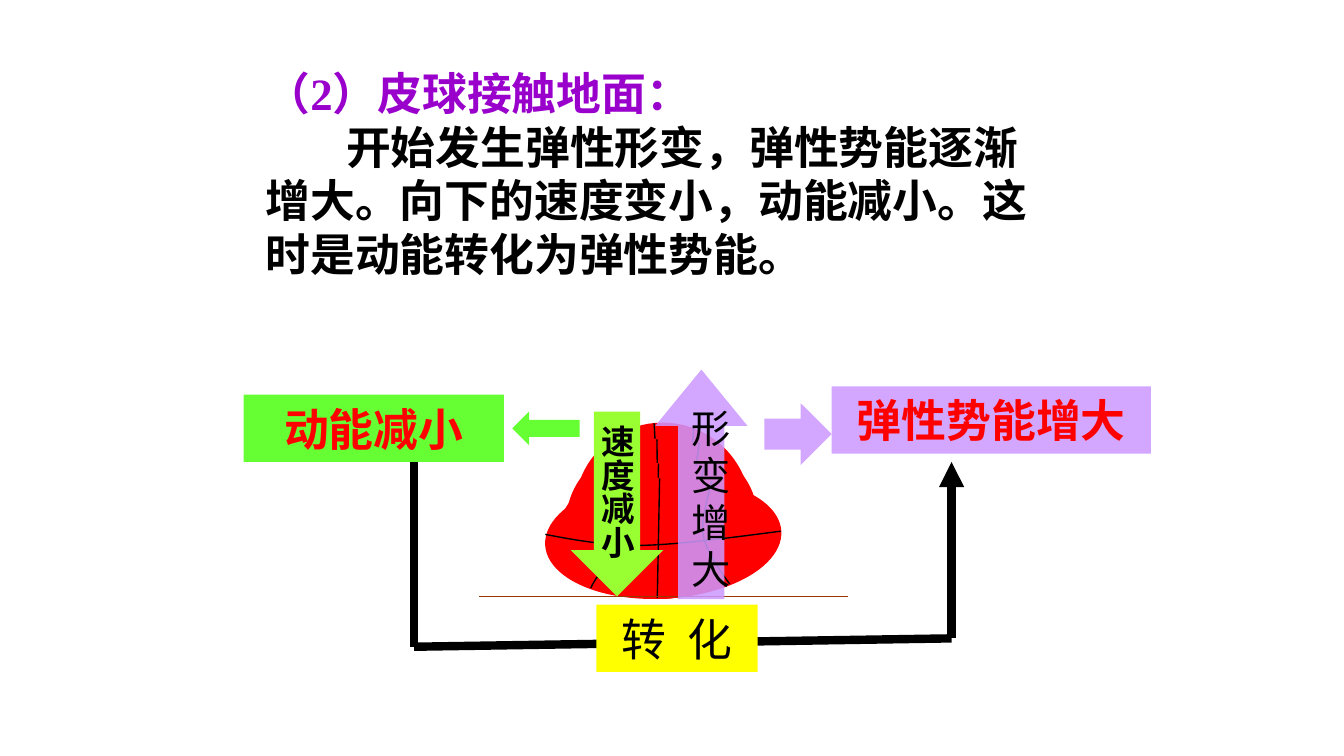
from dataclasses import dataclass
from typing import Optional

from lxml.etree import SubElement
from pptx import Presentation
from pptx.dml.color import RGBColor
from pptx.enum.shapes import MSO_CONNECTOR as Link, MSO_SHAPE as Shape
from pptx.enum.text import MSO_ANCHOR as Anchor, MSO_AUTO_SIZE as AutoSize, PP_ALIGN as Align
from pptx.oxml.ns import qn
from pptx.util import Pt

BLACK = RGBColor(0x00, 0x00, 0x00)
RED = RGBColor(0xFF, 0x00, 0x00)
PURPLE = RGBColor(0x99, 0x00, 0xCC)
LILAC = RGBColor(0xCC, 0x99, 0xFF)
GREEN = RGBColor(0x66, 0xFF, 0x33)
LIME = RGBColor(0x99, 0xFF, 0x33)
YELLOW = RGBColor(0xFF, 0xFF, 0x00)
BROWN = RGBColor(0x99, 0x33, 0x00)
SERIF = "Times New Roman"
SANS = "Noto Sans CJK SC"
LINE_RATIO = 1.2


@dataclass
class Block:
    kind: Shape
    left: float
    top: float
    width: float
    height: float
    fill: RGBColor
    opacity: int = 100
    rotation: float = 0
    head: Optional[float] = None


@dataclass
class Ball:
    left: float
    top: float
    width: float
    height: float
    rotation: float


@dataclass
class Stroke:
    x1: float
    y1: float
    x2: float
    y2: float
    color: RGBColor = BLACK
    weight: float = 4.5
    arrow: bool = False


BALLS = [
    Ball(308.2, 226.8, 93.6, 93.6, 354.4),
    Ball(303.8, 235.4, 101.5, 85, 356.5),
    Ball(299.5, 248.4, 109.4, 72, 357.8),
    Ball(292.3, 256.3, 126, 64.1, 356.6),
]

SEAMS = [
    [(0.25, 0.09), (0.26, 0.16), (0.31, 0.38), (0.29, 0.52), (0.29, 0.66), (0.2, 0.82), (0.18, 0.91)],
    [(0.72, 0.02), (0.71, 0.1), (0.66, 0.33), (0.67, 0.47), (0.68, 0.62), (0.74, 0.8), (0.77, 0.89)],
    [(0, 0.41), (0.12, 0.47), (0.24, 0.53), (0.41, 0.55), (0.57, 0.56), (0.78, 0.53), (1, 0.5)],
    [(0.5, 0), (0.5, 0), (0.48, 0.5), (0.46, 1)],
]

GROUND = Stroke(256.5, 319.5, 454.5, 319.5, BROWN, 0.75)
BRACKET = [
    Stroke(221.8, 247.5, 221.8, 346.5),
    Stroke(221.8, 346.5, 509.8, 342),
    Stroke(509.8, 342, 509.8, 247.5, arrow=True),
]


def set_frame(shape, *, anchor: Anchor = Anchor.TOP, wrap: bool = True,
              vertical: bool = False) -> None:
    frame = shape.text_frame
    frame.word_wrap = wrap
    frame.auto_size = AutoSize.NONE
    frame.vertical_anchor = anchor
    if vertical:
        frame._txBody.bodyPr.set("vert", "eaVert")


def write(para, text: str, *, size: float = 24, color: RGBColor = BLACK, bold: bool = False,
          font: str = SERIF, align: Align = Align.CENTER, indent: float = 0,
          spacing: float = 0) -> None:
    para.alignment = align
    para.space_before = Pt(0)
    para.line_spacing = Pt(size * LINE_RATIO)
    props = para._p.get_or_add_pPr()
    props.set("marL", "0")
    props.set("indent", str(Pt(indent)))
    SubElement(props, qn("a:buNone"))
    span = para.add_run()
    span.text = text
    span.font.size = Pt(size)
    span.font.bold = bold
    span.font.color.rgb = color
    span.font.name = font
    run_props = span._r.get_or_add_rPr()
    SubElement(run_props, qn("a:ea")).set("typeface", SANS)
    if spacing:
        run_props.set("spc", str(int(spacing * 100)))


def draw_block(page, block: Block):
    shape = page.shapes.add_shape(block.kind, Pt(block.left), Pt(block.top),
                                  Pt(block.width), Pt(block.height))
    shape.shadow.inherit = False
    shape.rotation = block.rotation
    shape.fill.solid()
    shape.fill.fore_color.rgb = block.fill
    shape.line.fill.background()
    if block.head is not None:
        shape.adjustments[0] = 0.5
        shape.adjustments[1] = block.head
    if block.opacity < 100:
        color = shape._element.spPr.find(qn("a:solidFill"))[0]
        SubElement(color, qn("a:alpha")).set("val", str(block.opacity * 1000))
    return shape


def draw_label(page, block: Block, text: str, **style) -> None:
    shape = draw_block(page, block)
    set_frame(shape)
    write(shape.text_frame.paragraphs[0], text, **style)


def draw_stroke(page, stroke: Stroke) -> None:
    line = page.shapes.add_connector(Link.STRAIGHT, Pt(stroke.x1), Pt(stroke.y1),
                                     Pt(stroke.x2), Pt(stroke.y2))
    line.line.color.rgb = stroke.color
    line.line.width = Pt(stroke.weight)
    if stroke.arrow:
        SubElement(line.line._get_or_add_ln(), qn("a:tailEnd")).set("type", "triangle")
    SubElement(line._element.spPr, qn("a:effectLst"))


def bend(seam) -> None:
    outline = next(seam._element.iter(qn("a:path")))
    segments = outline.findall(qn("a:lnTo"))
    for first in range(0, len(segments), 3):
        curve = SubElement(outline, qn("a:cubicBezTo"))
        for segment in segments[first:first + 3]:
            curve.append(segment[0])
            outline.remove(segment)


def draw_ball(page, ball: Ball) -> None:
    body = draw_block(page, Block(Shape.OVAL, ball.left, ball.top, ball.width, ball.height,
                                  RED, rotation=ball.rotation))
    body.line.color.rgb = RED
    body.line.width = Pt(0.75)
    for knots in SEAMS:
        points = [(Pt(ball.left + x * ball.width), Pt(ball.top + y * ball.height))
                  for x, y in knots]
        outline = page.shapes.build_freeform(*points[0])
        outline.add_line_segments(points[1:], close=False)
        seam = outline.convert_to_shape()
        bend(seam)
        seam.shadow.inherit = False
        seam.rotation = ball.rotation
        seam.fill.background()
        seam.line.color.rgb = BLACK
        seam.line.width = Pt(0.75)


def main() -> None:
    deck = Presentation()
    deck.slide_width, deck.slide_height = Pt(720), Pt(405)
    page = deck.slides.add_slide(deck.slide_layouts[1])
    title, body = page.placeholders
    title._element.getparent().remove(title._element)

    for ball in BALLS:
        draw_ball(page, ball)
    draw_stroke(page, GROUND)

    body.left, body.top, body.width, body.height = Pt(135), Pt(31.5), Pt(436.5), Pt(122.4)
    set_frame(body)
    write(body.text_frame.paragraphs[0], "（2）皮球接触地面：", color=PURPLE, bold=True, align=Align.LEFT)
    write(body.text_frame.add_paragraph(),
          "开始发生弹性形变，弹性势能逐渐增大。向下的速度变小，动能减小。这时是动能转化为弹性势能。",
          bold=True, align=Align.LEFT, indent=43.2)

    draw_label(page, Block(Shape.RECTANGLE, 130.5, 211.5, 139.5, 36, GREEN),
               "动能减小", color=RED, bold=True)
    draw_label(page, Block(Shape.RECTANGLE, 445.5, 207, 171, 36, LILAC, 86),
               "弹性势能增大", color=RED, bold=True)

    for stroke in BRACKET:
        draw_stroke(page, stroke)
    draw_label(page, Block(Shape.RECTANGLE, 319.5, 324, 86.4, 36, YELLOW),
               "转 化", font=SANS, spacing=3)

    speed = draw_block(page, Block(Shape.DOWN_ARROW, 305.8, 220.5, 49.5, 99, LIME, head=0.5))
    set_frame(speed, anchor=Anchor.MIDDLE, wrap=False, vertical=True)
    write(speed.text_frame.paragraphs[0], "速度减小", size=18, bold=True)
    draw_block(page, Block(Shape.LEFT_ARROW, 274.5, 220.5, 36, 18, GREEN, head=0.5))
    draw_label(page, Block(Shape.UP_ARROW, 351, 198, 49.5, 123, LILAC, 86, head=0.61),
               "形变增大", size=21)
    draw_block(page, Block(Shape.LEFT_ARROW, 409.5, 216, 36, 33.1, LILAC, 86, 180, 0.5))

    deck.save("out.pptx")


if __name__ == "__main__":
    main()
